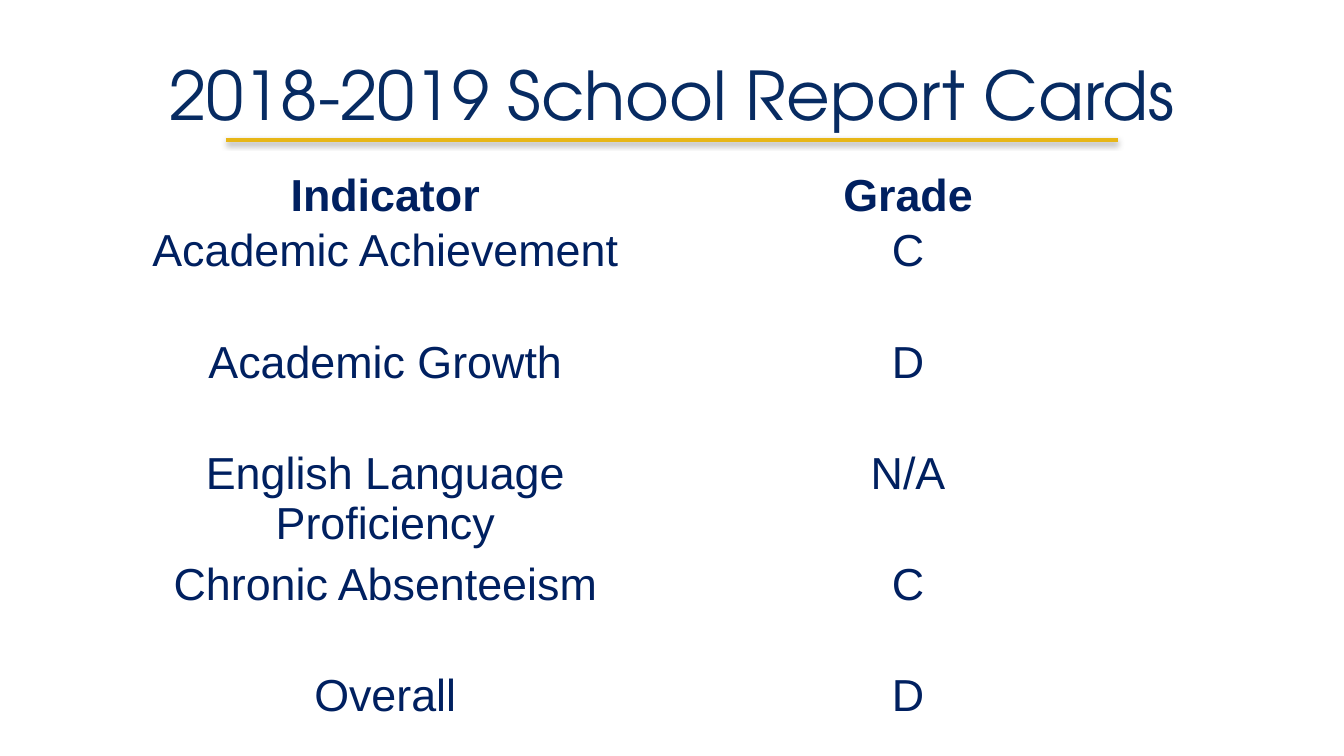
from dataclasses import dataclass

from lxml.etree import SubElement
from pptx import Presentation
from pptx.dml.color import RGBColor
from pptx.enum.shapes import MSO_CONNECTOR
from pptx.enum.text import MSO_ANCHOR, PP_ALIGN
from pptx.oxml.ns import qn
from pptx.util import Cm, Pt


@dataclass(frozen=True)
class Theme:
    title_ink: str = "072B62"
    ink: str = "002060"
    gold: str = "E7B617"
    shade: str = "000000"
    title_font: str = "TeX Gyre Adventor"
    font: str = "Arial"
    title_size: int = 36
    size: int = 24
    rule: int = 2


def apply(item, form):
    for name, value in form.items():
        setattr(item, name, value)


class Deck:
    def __init__(self, theme):
        self.theme = theme
        self.file = Presentation()
        apply(self.file, {"slide_width": Cm(25.4), "slide_height": Cm(14.29)})
        self.slide = self.file.slides.add_slide(self.file.slide_layouts[6])

    def label(self, frame, text, face, size, ink, bold=False):
        para = frame.paragraphs[0]
        para.alignment = PP_ALIGN.CENTER
        run = para.add_run()
        run.text = text
        apply(run.font, {"name": face, "size": Pt(size), "bold": bold})
        run.font.color.rgb = RGBColor.from_string(ink)

    def title(self, text, left, top, width, height):
        box = self.slide.shapes.add_textbox(Cm(left), Cm(top), Cm(width), Cm(height))
        inset = Cm(0.25)
        apply(box.text_frame, {
            "word_wrap": True, "vertical_anchor": MSO_ANCHOR.MIDDLE,
            "margin_left": inset, "margin_right": inset,
            "margin_top": inset, "margin_bottom": inset})
        look = self.theme
        self.label(box.text_frame, text, look.title_font, look.title_size, look.title_ink)

    def rule(self, left, right, y):
        line = self.slide.shapes.add_connector(
            MSO_CONNECTOR.STRAIGHT, Cm(left), Cm(y), Cm(right), Cm(y))
        line.line.width = Pt(self.theme.rule)
        line.line.color.rgb = RGBColor.from_string(self.theme.gold)
        # Soft shadow straight below the line
        effect = SubElement(line._element.spPr, qn("a:effectLst"))
        shadow = SubElement(effect, qn("a:outerShdw"), {
            "blurRad": str(Pt(3.1)), "dist": str(Pt(1.6)),
            "dir": "5400000", "rotWithShape": "0"})
        color = SubElement(shadow, qn("a:srgbClr"), val=self.theme.shade)
        SubElement(color, qn("a:alpha"), val="38000")

    def table(self, rows, left, top, widths, heights):
        grid = self.slide.shapes.add_table(
            len(rows), len(widths), Cm(left), Cm(top),
            Cm(sum(widths)), Cm(sum(heights))).table
        apply(grid, {"first_row": False, "horz_banding": False})
        for col, width in zip(grid.columns, widths):
            col.width = Cm(width)
        form = {"margin_left": Cm(0.18), "margin_right": Cm(0.18),
                "margin_top": 0, "margin_bottom": 0,
                "vertical_anchor": MSO_ANCHOR.TOP}
        look = self.theme
        for index, (row, texts) in enumerate(zip(grid.rows, rows)):
            row.height = Cm(heights[index])
            for cell, text in zip(row.cells, texts):
                apply(cell, form)
                cell.fill.background()
                self.label(cell.text_frame, text, look.font, look.size,
                           look.ink, bold=index == 0)


def main():
    deck = Deck(Theme())

    # Heading with its gold rule
    deck.rule(4.27, 21.13, 2.64)
    deck.title("2018-2019 School Report Cards", 1.27, 0.58, 22.86, 2.39)

    # Grades: single-line rows at both ends, double height between
    grades = [
        ("Indicator", "Grade"),
        ("Academic Achievement", "C"),
        ("Academic Growth", "D"),
        ("English Language Proficiency", "N/A"),
        ("Chronic Absenteeism", "C"),
        ("Overall", "D"),
    ]
    low = 1.05
    tall = 2 * low
    heights = [low] + [tall] * (len(grades) - 2) + [low]
    deck.table(grades, 2.06, 3.23, [10.44, 9.32], heights)

    deck.file.save("out.pptx")


if __name__ == "__main__":
    main()
